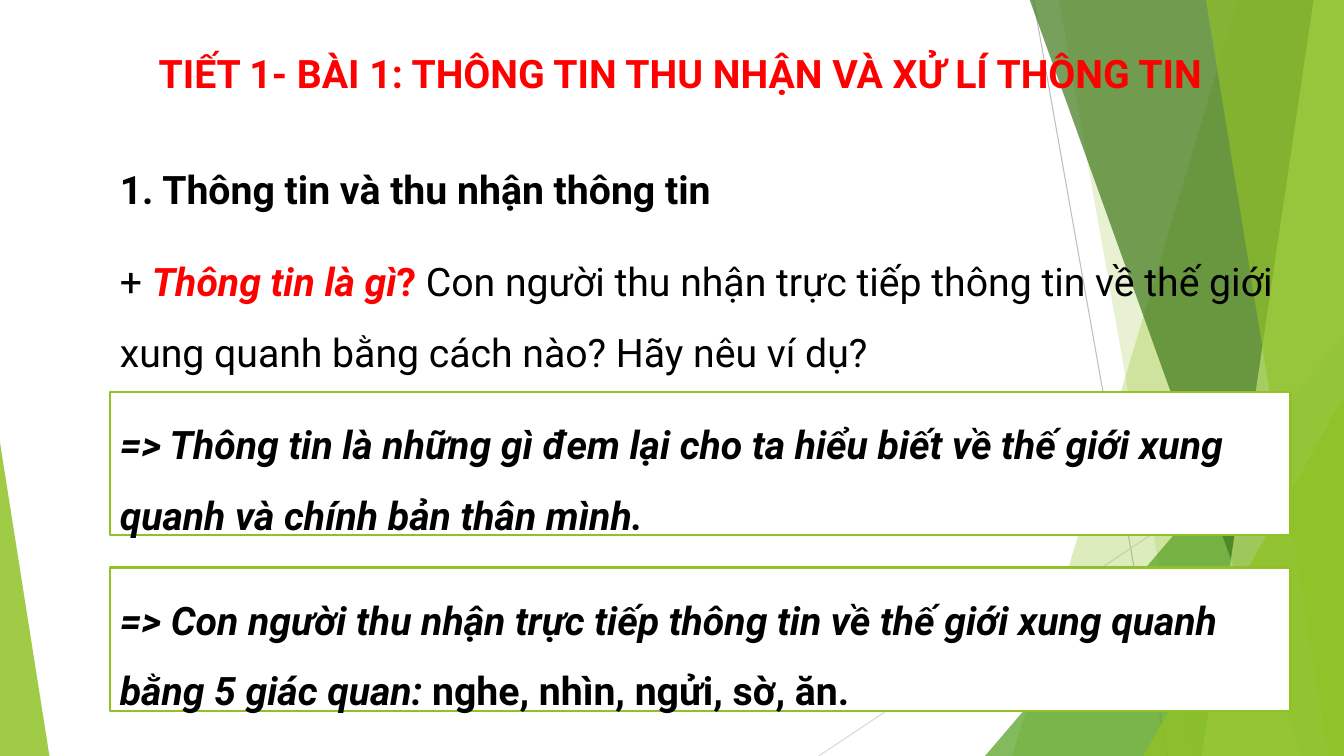
from lxml import etree
from pptx import Presentation
from pptx import util as u
from pptx.dml.color import RGBColor
from pptx.enum import shapes, text
from pptx.oxml.ns import qn

# Content: paragraphs are lists of (wording, format) runs
RED = {"bold": True, "color": "red"}
BOLD = {"bold": True}
KEY = {"bold": True, "italic": True}
TITLE = [("TIẾT 1- BÀI 1: THÔNG TIN THU NHẬN VÀ XỬ LÍ THÔNG TIN", RED)]
HEADING = [("1. Thông tin và thu nhận thông tin", BOLD)]
QUESTION = [
    ("+ ", {}),
    ("Thông tin là gì", {**RED, "italic": True}),
    ("? ", RED),
    ("Con người thu nhận trực tiếp thông tin về thế giới xung quanh "
     "bằng cách nào? Hãy nêu ví dụ?", {}),
]
ANSWERS = [
    [("=> Thông tin là những gì đem lại cho ta hiểu biết về thế giới xung "
      "quanh và chính bản thân mình.", KEY)],
    [("=> Con người thu nhận trực tiếp thông tin về thế giới xung quanh "
      "bằng 5 giác quan: ", KEY),
     ("nghe, nhìn, ngửi, sờ, ăn.", BOLD)],
]

# Theme
THEME = {
    "font": "Roboto", "size": 28, "line_spacing": 1.5, "gap": 4,
    "black": "000000", "red": "FF0000", "white": "FFFFFF",
    "green": "90C226", "mid": "54A021", "dark": "3F7819", "light": "C0E474",
    "gray": "BFBFBF", "pale_gray": "D9D9D9",
}

# Geometry in px, 100 px to the inch
PX = 9144
W, H, TOP = 1333, 750, -1
LEFT, BODY_W, BODY_H = 109, 1171, 142
ANSWER_TOP, ANSWER_STEP = 389, 174

# Background: lines, bands reaching the right edge, corner triangles
LINES = [(1025, 0, 1158, H, "gray"), (W, 403, 812, H, "pale_gray")]
BANDS = [  # left edge at top, left edge at bottom, colour, opacity %
    (1228, 1004, "green", 30),
    (1050, 1183, "green", 20),
    (1021, 1291, "dark", 70),
    (1303, 1192, "light", 70),
    (1196, 1318, "green", 65),
]
TRIANGLES = [  # left, top, width, apex, colour, opacity %
    (977, 333, 356, 1, "mid", 72),
    (1134, 393, 199, 1, "green", 80),
    (0, 439, 49, 0, "green", 85),
]
BANDS_BELOW_TRIANGLE = 2


def rgb(name):
    return RGBColor.from_string(THEME[name])


def px(*values):
    return [v * PX for v in values]


def paint(sp, color, opacity=100):
    sp.shadow.inherit = False
    sp.line.fill.background()
    sp.fill.solid()
    sp.fill.fore_color.rgb = rgb(color)
    if opacity < 100:
        clr = sp._element.spPr.find(qn("a:solidFill"))[0]
        etree.SubElement(clr, qn("a:alpha"), val=str(opacity * 1000))


def add_line(s, x1, y1, x2, y2, color):
    line = s.shapes.add_connector(shapes.MSO_CONNECTOR.STRAIGHT, *px(x1, y1, x2, y2))
    line.line.color.rgb = rgb(color)
    line.line.width = u.Pt(0.75)
    etree.SubElement(line._element.spPr, qn("a:effectLst"))


def add_band(s, top_x, bottom_x, color, opacity):
    ff = s.shapes.build_freeform(top_x, TOP, scale=PX)
    ff.add_line_segments([(W, TOP), (W, H), (bottom_x, H)], close=True)
    paint(ff.convert_to_shape(), color, opacity)


def add_triangle(s, x, y, w, apex, color, opacity):
    sp = s.shapes.add_shape(shapes.MSO_SHAPE.ISOSCELES_TRIANGLE, *px(x, y, w, H - y))
    sp.adjustments[0] = apex
    paint(sp, color, opacity)


def write(sp, runs, align=text.PP_ALIGN.LEFT):
    tf = sp.text_frame
    tf.word_wrap = True
    tf.vertical_anchor = text.MSO_ANCHOR.TOP
    p = tf.paragraphs[0]
    gap = u.Pt(THEME["gap"])
    layout = {"alignment": align, "line_spacing": THEME["line_spacing"],
              "space_before": gap, "space_after": gap}
    for name, value in layout.items():
        setattr(p, name, value)
    for wording, fmt in runs:
        r = p.add_run()
        r.text = wording
        font = {"name": THEME["font"], "size": u.Pt(THEME["size"]),
                "bold": fmt.get("bold", False), "italic": fmt.get("italic", False)}
        for name, value in font.items():
            setattr(r.font, name, value)
        r.font.color.rgb = rgb(fmt.get("color", "black"))


def main():
    prs = Presentation()
    prs.slide_width, prs.slide_height = px(W, H)
    s = prs.slides.add_slide(prs.slide_layouts[6])

    # Background, from back to front
    for line in LINES:
        add_line(s, *line)
    for band in BANDS[:BANDS_BELOW_TRIANGLE]:
        add_band(s, *band)
    add_triangle(s, *TRIANGLES[0])
    for band in BANDS[BANDS_BELOW_TRIANGLE:]:
        add_band(s, *band)
    for triangle in TRIANGLES[1:]:
        add_triangle(s, *triangle)

    # Title, heading and question
    write(s.shapes.add_textbox(*px(79, 21, 1191, 71)), TITLE, text.PP_ALIGN.CENTER)
    write(s.shapes.add_textbox(*px(LEFT, 136, 707, 81)), HEADING)
    write(s.shapes.add_textbox(*px(LEFT, 227, BODY_W, BODY_H)), QUESTION)

    # Framed answers
    for i, runs in enumerate(ANSWERS):
        y = ANSWER_TOP + i * ANSWER_STEP
        sp = s.shapes.add_shape(shapes.MSO_SHAPE.RECTANGLE, *px(LEFT, y, BODY_W, BODY_H))
        paint(sp, "white")
        sp.line.color.rgb = rgb("green")
        sp.line.width = u.Pt(1.5)
        write(sp, runs)

    prs.save("out.pptx")


if __name__ == "__main__":
    main()
